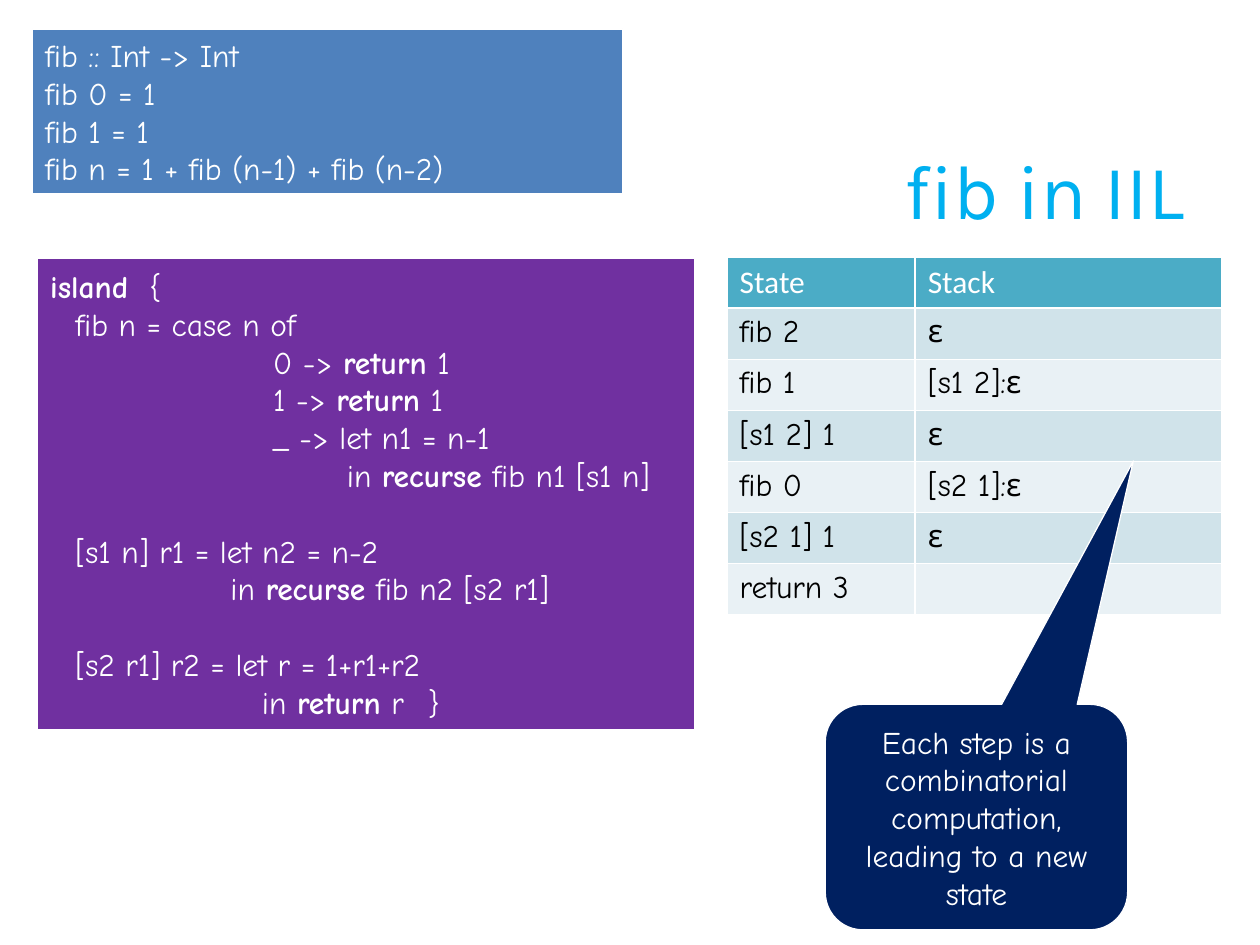
from lxml.etree import SubElement
from pptx import Presentation
from pptx.dml.color import RGBColor as Rgb
from pptx.enum.shapes import MSO_SHAPE as Shape
from pptx.enum.text import MSO_ANCHOR as Anchor, MSO_AUTO_SIZE as Fit, PP_ALIGN as Align
from pptx.oxml.ns import qn
from pptx.util import Inches, Pt

TITLE = "fib in IIL"
HASKELL = [
    "fib :: Int -> Int",
    "fib 0 = 1",
    "fib 1 = 1",
    "fib n = 1 + fib (n-1) + fib (n-2)",
]
BODY, CASES, STEPS = (0.2,), (1.77,), (0.2, 1.18, 1.77)
ISLAND = [
    ("*island*  {", ()),
    ("\tfib n = case n of", BODY),
    ("\t0 -> *return* 1", CASES),
    ("\t1 -> *return* 1", CASES),
    ("\t_ -> let n1 = n-1", CASES),
    ("\t       in *recurse* fib n1 [s1 n]", CASES),
    ("\t[s1 n] r1 = let n2 = n-2", STEPS),
    ("\t\t   in *recurse* fib n2 [s2 r1]", STEPS),
    ("\t[s2 r1] r2 = let r = 1+r1+r2", STEPS),
    ("\t\t      in *return* r\t}", STEPS),
]
TRACE = [
    ("State", "Stack"),
    ("fib 2", "ε"),
    ("fib 1", "[s1 2]:ε"),
    ("[s1 2] 1", "ε"),
    ("fib 0", "[s2 1]:ε"),
    ("[s2 1] 1", "ε"),
    ("return 3", ""),
]
REMARK = "Each step is a combinatorial computation, leading to a new state"

THEME = {
    "title": {"name": "Karla", "size": Pt(44), "color": "00B0F0"},
    "code": {"name": "Comic Neue", "size": Pt(18), "color": "FFFFFF"},
    "header": {"name": "Calibri", "size": Pt(18), "color": "FFFFFF"},
    "trace": {"name": "Comic Neue", "size": Pt(18), "color": "000000"},
    "haskell_fill": "4F81BD",
    "island_fill": "7030A0",
    "remark_fill": "002060",
    "outline": "FFFFFF",
    "header_fill": "4BACC6",
    "bands": ("E9F1F5", "D0E3EA"),
    "blank_line": Pt(21.6),
}
PLACES = {
    "title": (5, 11.6, 90, 16.67),
    "haskell": (2.6, 3.07, 46.8, 17.47),
    "island": (3, 27.33, 52.1, 49.87),
    "trace": (57.7, 27.2, 39.3, 37.87),
    "remark": (65.5, 74.53, 24, 23.87),
}
STATE_SHARE = 0.38
POINTER = (0.519, -1.579, 0.167)

deck = Presentation()
deck.slide_width, deck.slide_height = Inches(10), Inches(7.5)
slide = deck.slides.add_slide(deck.slide_layouts[6])


def place(part):
    sides = (deck.slide_width, deck.slide_height) * 2
    return [int(side * share / 100) for side, share in zip(sides, PLACES[part])]


def apply(target, formats):
    for attribute, value in formats.items():
        setattr(target, attribute, value)


def write(paragraph, text, style, tabs=()):
    if tabs:
        stops = SubElement(paragraph._p.get_or_add_pPr(), qn("a:tabLst"))
        for stop in tabs:
            SubElement(stops, qn("a:tab"), pos=str(Inches(stop)), algn="l")
    for index, piece in enumerate(text.split("*")):
        if piece:
            run = paragraph.add_run()
            run.text = piece
            formats = {k: v for k, v in THEME[style].items() if k != "color"}
            apply(run.font, {**formats, "bold": index % 2 == 1})
            run.font.color.rgb = Rgb.from_string(THEME[style]["color"])


def panel(part, lines, preset=Shape.RECTANGLE, align=Align.LEFT):
    box = slide.shapes.add_shape(preset, *place(part))
    box.shadow.inherit = False
    box.fill.solid()
    box.fill.fore_color.rgb = Rgb.from_string(THEME[part + "_fill"])
    box.line.color.rgb = Rgb.from_string(THEME["outline"])
    box.line.width = Pt(0.75)
    frame = box.text_frame
    apply(frame, {"word_wrap": True, "vertical_anchor": Anchor.MIDDLE,
                  "auto_size": Fit.SHAPE_TO_FIT_TEXT})
    for index, (text, tabs) in enumerate(lines):
        paragraph = frame.paragraphs[0] if index == 0 else frame.add_paragraph()
        write(paragraph, text, "code", tabs)
        paragraph.alignment = align
        if text.startswith("\t["):
            paragraph.space_before = THEME["blank_line"]
    return box


heading = slide.shapes.add_textbox(*place("title")).text_frame
apply(heading, {"word_wrap": True, "vertical_anchor": Anchor.MIDDLE})
heading.paragraphs[0].alignment = Align.RIGHT
write(heading.paragraphs[0], TITLE, "title")

panel("haskell", [(line, ()) for line in HASKELL])
panel("island", ISLAND)

trace_place = place("trace")
trace = slide.shapes.add_table(len(TRACE), 2, *trace_place).table
for column, share in zip(trace.columns, (STATE_SHARE, 1 - STATE_SHARE)):
    column.width = int(trace_place[2] * share)
for row, entries in enumerate(TRACE):
    for column, entry in enumerate(entries):
        cell = trace.cell(row, column)
        cell.fill.solid()
        fill = THEME["bands"][row % 2] if row else THEME["header_fill"]
        cell.fill.fore_color.rgb = Rgb.from_string(fill)
        write(cell.text_frame.paragraphs[0], entry, "trace" if row else "header")

remark = panel("remark", [(REMARK, ())], Shape.ROUNDED_RECTANGULAR_CALLOUT, Align.CENTER)
for index, value in enumerate(POINTER):
    remark.adjustments[index] = value

deck.save("out.pptx")
